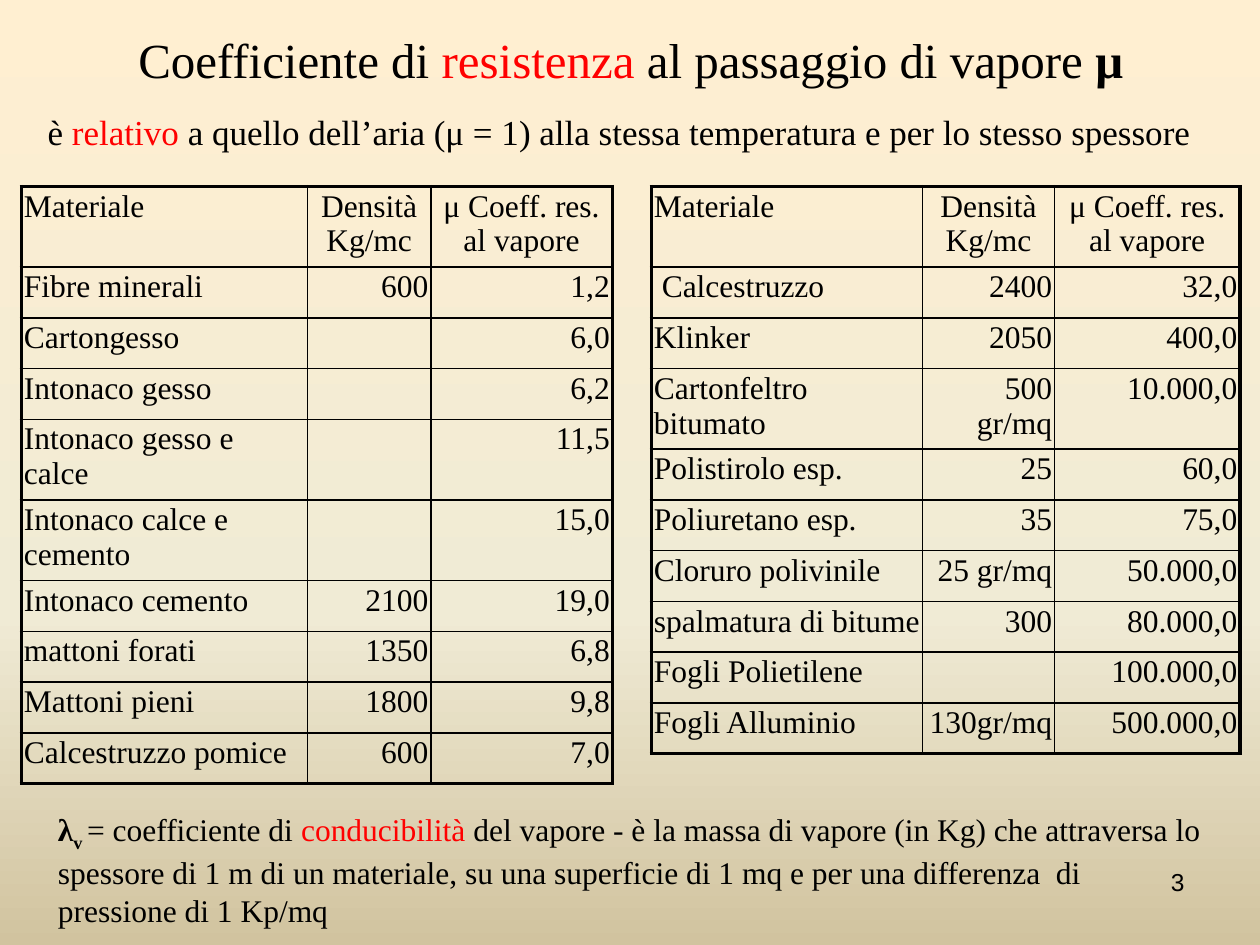
from lxml.etree import SubElement
from pptx import Presentation
from pptx.dml.color import RGBColor
from pptx.enum.text import MSO_ANCHOR, PP_ALIGN
from pptx.oxml.ns import qn
from pptx.util import Inches, Pt

SLIDE_WIDTH, SLIDE_HEIGHT = Inches(10), Inches(7.5)
BLACK = RGBColor(0x00, 0x00, 0x00)
RED = RGBColor(0xFF, 0x00, 0x00)
CREAM = RGBColor(0xFF, 0xEF, 0xD1)
IVORY = RGBColor(0xF0, 0xEB, 0xD5)
SAND = RGBColor(0xD1, 0xC3, 0x9F)
BACKDROP = {0: CREAM, 65: IVORY, 100: SAND}

SERIF, SANS = "Times New Roman", "Arial"
OUTER, INNER = Pt(2.25), Pt(1)
NO_STYLE = "{2D5ABB26-0587-4C30-8999-92F81FD0307C}"
ROW_HEIGHT = Pt(29)
SIDES = ("left", "top", "right", "bottom")
TIGHT = dict(zip(SIDES, map(Inches, (0.02, 0.01, 0.02, 0.01))))
CELL_MARGINS = dict.fromkeys(SIDES, Inches(0.02))

HEADER = ("Materiale", "Densità Kg/mc", "μ Coeff. res. al vapore")
MASONRY = [
    ("Fibre minerali", "600", "1,2"),
    ("Cartongesso", "", "6,0"),
    ("Intonaco gesso", "", "6,2"),
    ("Intonaco gesso e calce", "", "11,5"),
    ("Intonaco calce e cemento", "", "15,0"),
    ("Intonaco cemento", "2100", "19,0"),
    ("mattoni forati", "1350", "6,8"),
    ("Mattoni pieni", "1800", "9,8"),
    ("Calcestruzzo pomice", "600", "7,0"),
]
BARRIERS = [
    (" Calcestruzzo", "2400", "32,0"),
    ("Klinker", "2050", "400,0"),
    ("Cartonfeltro bitumato", "500 gr/mq", "10.000,0"),
    ("Polistirolo esp.", "25", "60,0"),
    ("Poliuretano esp.", "35", "75,0"),
    ("Cloruro polivinile", "25 gr/mq", "50.000,0"),
    ("spalmatura di bitume", "300", "80.000,0"),
    ("Fogli Polietilene", "", "100.000,0"),
    ("Fogli Alluminio", "130gr/mq", "500.000,0"),
]


def across(percent):
    return round(SLIDE_WIDTH * percent / 100)


def down(percent):
    return round(SLIDE_HEIGHT * percent / 100)


def apply(target, values):
    for name, value in values.items():
        setattr(target, name, value)


def set_margins(target, margins):
    apply(target, {f"margin_{side}": size for side, size in margins.items()})


def write(paragraph, pieces, size, align=PP_ALIGN.LEFT, face=SERIF):
    paragraph.alignment = align
    for words, *changes in pieces:
        run = paragraph.add_run()
        run.text = words
        run.font.color.rgb = RED if "red" in changes else BLACK
        apply(run.font, {"name": face, "size": Pt(size), "bold": "bold" in changes})
        if "sub" in changes:
            run._r.get_or_add_rPr().set("baseline", "-25000")


def paint_background(slide):
    fill = slide.background.fill
    fill.gradient()
    fill.gradient_angle = 270
    stops = slide.element.find(".//" + qn("a:gsLst"))
    for stop in list(stops):
        stops.remove(stop)
    for percent, color in BACKDROP.items():
        stop = SubElement(stops, qn("a:gs"), pos=str(percent * 1000))
        SubElement(stop, qn("a:srgbClr"), val=str(color))


def add_title(slide, pieces):
    title = slide.shapes.title
    apply(title, {"left": across(2.3), "top": down(2.4),
                  "width": across(95.5), "height": down(7.6)})
    frame = title.text_frame
    apply(frame, {"vertical_anchor": MSO_ANCHOR.MIDDLE, "word_wrap": True})
    set_margins(frame, TIGHT)
    write(frame.paragraphs[0], pieces, 28, PP_ALIGN.CENTER)


def add_text(slide, left, top, width, height, pieces, size, margins=None, **style):
    box = slide.shapes.add_textbox(across(left), down(top), across(width), down(height))
    box.text_frame.word_wrap = True
    set_margins(box.text_frame, margins or {})
    write(box.text_frame.paragraphs[0], pieces, size, **style)


def draw_borders(cell, outer_edges):
    properties = cell._tc.get_or_add_tcPr()
    for edge in ("lnL", "lnR", "lnT", "lnB"):
        width = OUTER if edge in outer_edges else INNER
        line = SubElement(properties, qn(f"a:{edge}"), w=str(int(width)))
        paint = SubElement(line, qn("a:solidFill"))
        SubElement(paint, qn("a:srgbClr"), val=str(BLACK))


def add_materials(slide, left, column_shares, header_height, materials):
    rows = [HEADER, *materials]
    last_row, last_column = len(rows) - 1, len(HEADER) - 1
    frame = slide.shapes.add_table(
        len(rows), len(HEADER), across(left), down(19.73), across(sum(column_shares)),
        header_height + ROW_HEIGHT * len(materials))
    table = frame.table
    apply(table, {"first_row": False, "horz_banding": False})
    table._tbl.tblPr.find(qn("a:tableStyleId")).text = NO_STYLE
    for column, share in zip(table.columns, column_shares):
        column.width = across(share)
    for r, row in enumerate(rows):
        table.rows[r].height = ROW_HEIGHT if r else header_height
        for c, words in enumerate(row):
            cell = table.cell(r, c)
            set_margins(cell, CELL_MARGINS)
            edges = {"lnL": c == 0, "lnR": c == last_column,
                     "lnT": r == 0, "lnB": r == last_row}
            draw_borders(cell, {edge for edge, outer in edges.items() if outer})
            cell.fill.background()
            if words:
                number_align = PP_ALIGN.RIGHT if r else PP_ALIGN.CENTER
                write(cell.text_frame.paragraphs[0], [(words,)], 18,
                      number_align if c else PP_ALIGN.LEFT)


def main():
    deck = Presentation()
    apply(deck, {"slide_width": SLIDE_WIDTH, "slide_height": SLIDE_HEIGHT})
    slide = deck.slides.add_slide(deck.slide_layouts[5])
    paint_background(slide)
    add_text(slide, 71.7, 91.07, 23.3, 6.93, [("3",)], 14,
             align=PP_ALIGN.RIGHT, face=SANS)
    add_title(slide, [("Coefficiente di ",), ("resistenza", "red"),
                      (" al passaggio di vapore ",), ("μ", "bold")])
    add_materials(slide, 1.7, (22.7, 9.8, 14.4), ROW_HEIGHT, MASONRY)
    add_materials(slide, 51.7, (21.5, 10.5, 14.7), Inches(0.64), BARRIERS)
    add_text(slide, 2.8, 11.07, 93.7, 5.73, [
        ("è ",), ("relativo", "red"),
        (" a quello dell’aria (μ = 1) alla stessa temperatura e per lo stesso spessore",),
    ], 20)
    add_text(slide, 4.4, 85.6, 91.6, 12.4, [
        ("λ", "bold"), ("v ", "bold", "sub"), ("= coefficiente di ",),
        ("conducibilità", "red"),
        (" del vapore - è la massa di vapore (in Kg) che attraversa lo spessore "
         "di 1 m di un materiale, su una superficie di 1 mq e per una differenza  "
         "di pressione di 1 Kp/mq",),
    ], 18, TIGHT)
    deck.save("out.pptx")


if __name__ == "__main__":
    main()
